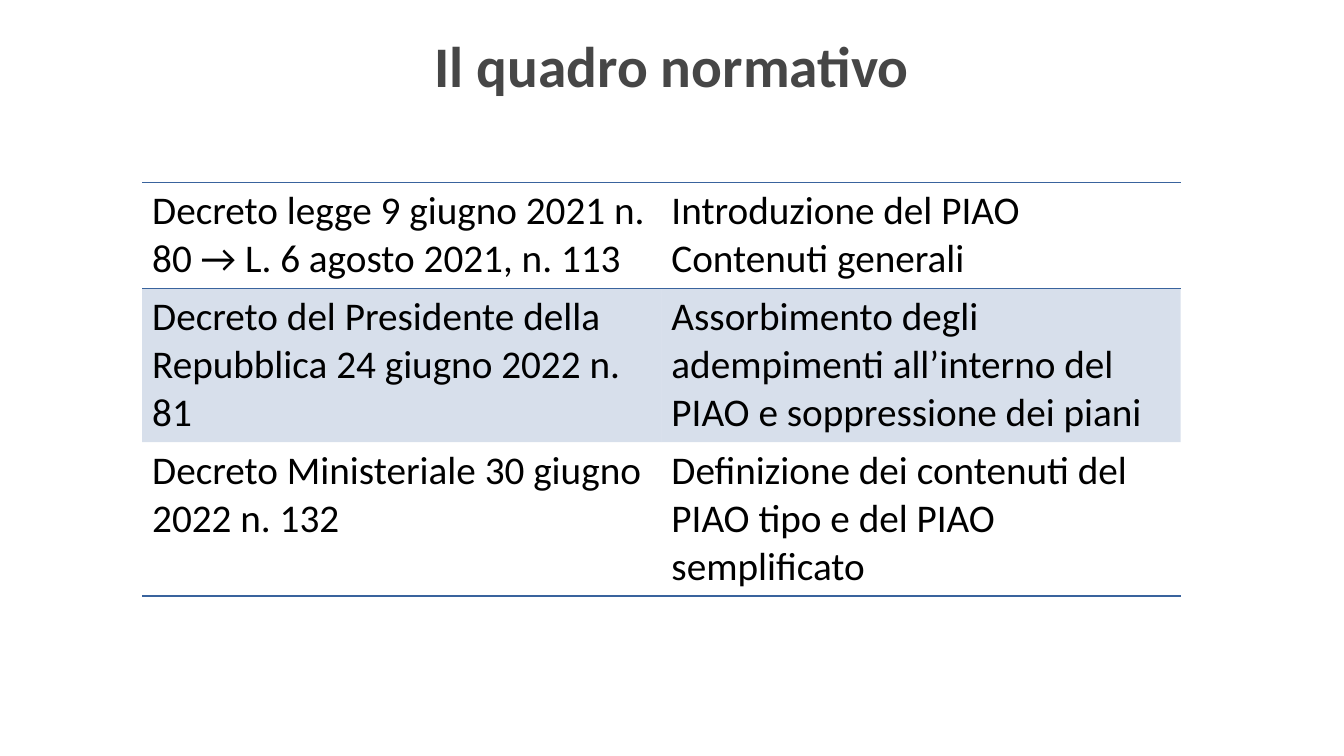
from lxml.etree import SubElement
from pptx import Presentation
from pptx.dml.color import RGBColor
from pptx.enum.text import MSO_ANCHOR, MSO_AUTO_SIZE, PP_ALIGN
from pptx.oxml.ns import qn
from pptx.util import Inches, Pt

COLORS = {"title": "464646", "text": "000000", "accent": "39639D"}
FONT = "Calibri"
BAND_OPACITY = 20
ROW_HEIGHTS = [1.05, 1.52, 1.52]
BANDED_ROW = 1
RULED_EDGES = {0, 1, 3}  # horizontal edges, counted from the table top
DECREES = [
    ("Decreto legge 9 giugno 2021 n. 80 → L. 6 agosto 2021, n. 113",
     "Introduzione del PIAO\nContenuti generali"),
    ("Decreto del Presidente della Repubblica 24 giugno 2022 n. 81",
     "Assorbimento degli adempimenti all’interno del PIAO e soppressione dei piani"),
    ("Decreto Ministeriale 30 giugno 2022 n. 132",
     "Definizione dei contenuti del PIAO tipo e del PIAO semplificato"),
]


def format_text(text_frame, size, color, bold=False):
    for paragraph in text_frame.paragraphs:
        for run in paragraph.runs:
            run.font.name = FONT
            run.font.size = Pt(size)
            run.font.bold = bold
            run.font.color.rgb = RGBColor.from_string(COLORS[color])


def add_title(slide, left, top, width, height):
    title = slide.shapes.title
    title.left, title.top = Inches(left), Inches(top)
    title.width, title.height = Inches(width), Inches(height)
    text_frame = title.text_frame
    text_frame.text = "Il quadro normativo"
    text_frame.auto_size = MSO_AUTO_SIZE.NONE
    text_frame.vertical_anchor = MSO_ANCHOR.MIDDLE
    text_frame.paragraphs[0].alignment = PP_ALIGN.CENTER
    format_text(text_frame, 41, "title", bold=True)


def add_solid_fill(parent):
    fill = SubElement(parent, qn("a:solidFill"))
    return SubElement(fill, qn("a:srgbClr"), val=COLORS["accent"])


def format_cell(cell, row):
    # Borders come before the fill in the cell properties
    properties = cell._tc.get_or_add_tcPr()
    ruled = {"lnT": row in RULED_EDGES, "lnB": row + 1 in RULED_EDGES}
    for side in ("lnL", "lnR", "lnT", "lnB"):
        border = SubElement(properties, qn(f"a:{side}"), w=str(Pt(1)))
        if ruled.get(side):
            add_solid_fill(border)
        else:
            SubElement(border, qn("a:noFill"))
    if row == BANDED_ROW:
        color = add_solid_fill(properties)
        SubElement(color, qn("a:alpha"), val=str(BAND_OPACITY * 1000))
    else:
        cell.fill.background()


def add_decree_table(slide, left, top, width):
    frame = slide.shapes.add_table(
        len(DECREES), 2, Inches(left), Inches(top),
        Inches(width), Inches(sum(ROW_HEIGHTS)))
    table = frame.table
    table.first_row = False
    table.horz_banding = False
    for row, texts in enumerate(DECREES):
        table.rows[row].height = Inches(ROW_HEIGHTS[row])
        for column, text in enumerate(texts):
            cell = table.cell(row, column)
            cell.text_frame.text = text
            format_text(cell.text_frame, 28, "text")
            format_cell(cell, row)


def main():
    presentation = Presentation()
    presentation.slide_width = Inches(13.33)
    presentation.slide_height = Inches(7.5)
    slide = presentation.slides.add_slide(presentation.slide_layouts[5])
    add_title(slide, 0, 0.02, 13.33, 1.25)
    add_decree_table(slide, 1.41, 1.81, 10.3)
    presentation.save("out.pptx")


if __name__ == "__main__":
    main()
